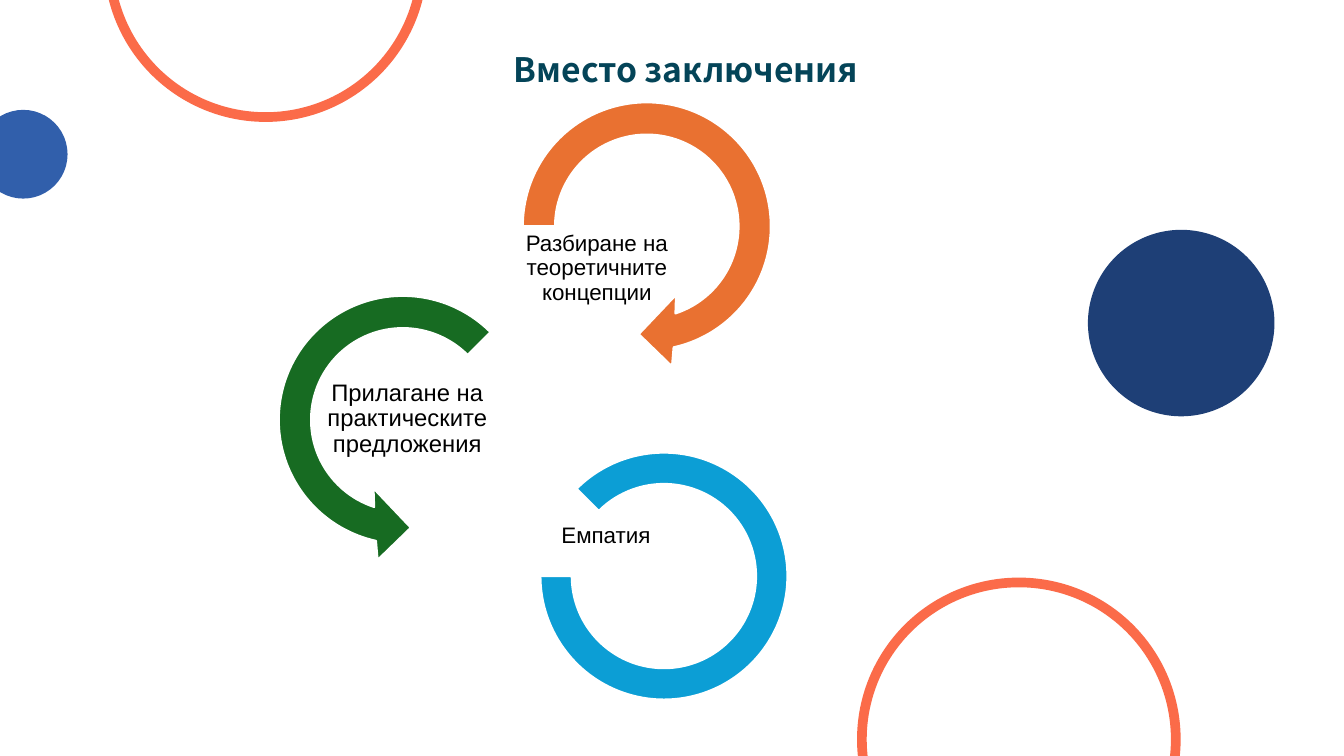
from dataclasses import dataclass
from math import cos, radians, sin

from lxml.etree import SubElement as Sub
from pptx import Presentation
from pptx.dml.color import RGBColor as Rgb
from pptx.enum.shapes import MSO_SHAPE as Kind
from pptx.enum.text import MSO_ANCHOR as Anchor, MSO_AUTO_SIZE as Auto, PP_ALIGN as Align
from pptx.oxml.ns import qn
from pptx.util import Inches, Pt

HUES = {
    "navy": "1E3F76", "blue": "315FAB", "coral": "FB6B49", "orange": "E97131",
    "green": "176B22", "sky": "0C9ED5", "teal": "044458", "black": "000000", "white": "FFFFFF",
}


@dataclass
class Disc:
    kind: Kind
    left: float
    top: float
    size: float
    hue: str
    bends: tuple = ()
    edge: bool = False


@dataclass
class Arrow:
    left: float
    top: float
    start: float
    flip: int
    hue: str


@dataclass
class Label:
    text: str
    left: float
    top: float
    width: float
    height: float
    size: int
    inset: float = 0.01


DISCS = [
    Disc(Kind.OVAL, 10.79, 2.28, 1.85, "navy"),
    Disc(Kind.OVAL, -0.21, 1.09, 0.88, "blue"),
    Disc(Kind.DONUT, 8.5, 5.73, 3.21, "coral", (0.03,)),
    Disc(Kind.DONUT, 1.03, -2, 3.21, "coral", (0.03,)),
    Disc(Kind.BLOCK_ARC, 5.36, 4.49, 2.45, "sky", (135, 108, 0.127), True),
]
ARROWS = [
    Arrow(4.99, 0.82, 180, 1, "orange"),
    Arrow(2.57, 2.74, 225, -1, "green"),
]
LABELS = [
    Label("Разбиране на теоретичните концепции", 4.74, 2.27, 2.36, 0.79, 16),
    Label("Прилагане на практическите предложения", 2.85, 3.53, 2.38, 1.26, 17),
    Label("Емпатия", 5.22, 4.76, 1.58, 0.79, 16, 0.34),
]
SPAN = 2.85
OUTER, INNER = 1.23, 0.91
OUT_END, IN_END = 437.5, 431.8
HEAD = [(0.25, 1.39), (-0.08, 1.07), (0.29, 0.68)]


def spot(radius: float, angle: float) -> tuple:
    return radius * cos(radians(angle)), radius * sin(radians(angle))


def add_point(path, tag: str, point: tuple, flip: int) -> None:
    x, y = SPAN / 2 + flip * point[0], SPAN / 2 + point[1]
    Sub(Sub(path, qn(tag)), qn("a:pt"), x=str(Inches(x)), y=str(Inches(y)))


def add_arc(path, radius: float, start: float, end: float, flip: int) -> None:
    first = (start if flip > 0 else 180 - start) % 360
    size = str(Inches(radius))
    Sub(path, qn("a:arcTo"), wR=size, hR=size, stAng=str(round(first * 60000)),
        swAng=str(round(flip * (end - start) * 60000)))


def paint(shape, hue: str, edge: bool) -> None:
    shape.shadow.inherit = False
    shape.fill.solid()
    shape.fill.fore_color.rgb = Rgb.from_string(HUES[hue])
    if edge:
        shape.line.color.rgb = Rgb.from_string(HUES["white"])
        shape.line.width = Pt(1.5)
    else:
        shape.line.fill.background()


def draw_disc(slide, disc: Disc) -> None:
    box = map(Inches, (disc.left, disc.top, disc.size, disc.size))
    shape = slide.shapes.add_shape(disc.kind, *box)
    for i, bend in enumerate(disc.bends):
        shape.adjustments[i] = bend
    paint(shape, disc.hue, disc.edge)


def draw_arrow(slide, arrow: Arrow) -> None:
    left, top, span = map(Inches, (arrow.left, arrow.top, SPAN))
    pen = slide.shapes.build_freeform(left, top)
    pen.add_line_segments([(left + span, top + span)])
    shape = pen.convert_to_shape()
    path = shape.element.find(".//" + qn("a:path"))
    for step in list(path):
        path.remove(step)
    add_point(path, "a:moveTo", spot(OUTER, arrow.start), arrow.flip)
    add_arc(path, OUTER, arrow.start, OUT_END, arrow.flip)
    for point in HEAD + [spot(INNER, IN_END)]:
        add_point(path, "a:lnTo", point, arrow.flip)
    add_arc(path, INNER, IN_END, arrow.start, arrow.flip)
    Sub(path, qn("a:close"))
    paint(shape, arrow.hue, True)


def write(shape, text: str, frame: dict, para: dict, font: dict, hue: str) -> None:
    body = shape.text_frame
    body.text = text
    line = body.paragraphs[0]
    face = line.runs[0].font
    for part, values in ((body, frame), (line, para), (face, font)):
        for name, value in values.items():
            setattr(part, name, value)
    face.color.rgb = Rgb.from_string(HUES[hue])


def draw_label(slide, label: Label) -> None:
    box = map(Inches, (label.left, label.top, label.width, label.height))
    thin = Inches(0.01)
    frame = {"word_wrap": True, "vertical_anchor": Anchor.MIDDLE, "margin_left": thin,
             "margin_right": thin, "margin_bottom": thin, "margin_top": Inches(label.inset)}
    write(slide.shapes.add_textbox(*box), label.text, frame,
          {"alignment": Align.CENTER, "line_spacing": 0.9},
          {"name": "Arial", "size": Pt(label.size)}, "black")


def draw_title(slide) -> None:
    title = slide.shapes.title
    spots = {"left": 2.76, "top": 0.41, "width": 8.09, "height": 0.51}
    for name, value in spots.items():
        setattr(title, name, Inches(value))
    frame = {"word_wrap": True, "vertical_anchor": Anchor.TOP, "auto_size": Auto.SHAPE_TO_FIT_TEXT}
    write(title, "Вместо заключения", frame,
          {"alignment": Align.CENTER, "line_spacing": 1.07},
          {"name": "Noto Sans CJK KR", "size": Pt(24), "bold": True}, "teal")


def main() -> None:
    deck = Presentation()
    deck.slide_width, deck.slide_height = Inches(13.33), Inches(7.5)
    slide = deck.slides.add_slide(deck.slide_layouts[5])
    draw_title(slide)
    for disc in DISCS:
        draw_disc(slide, disc)
    for arrow in ARROWS:
        draw_arrow(slide, arrow)
    for label in LABELS:
        draw_label(slide, label)
    deck.save("out.pptx")


if __name__ == "__main__":
    main()
